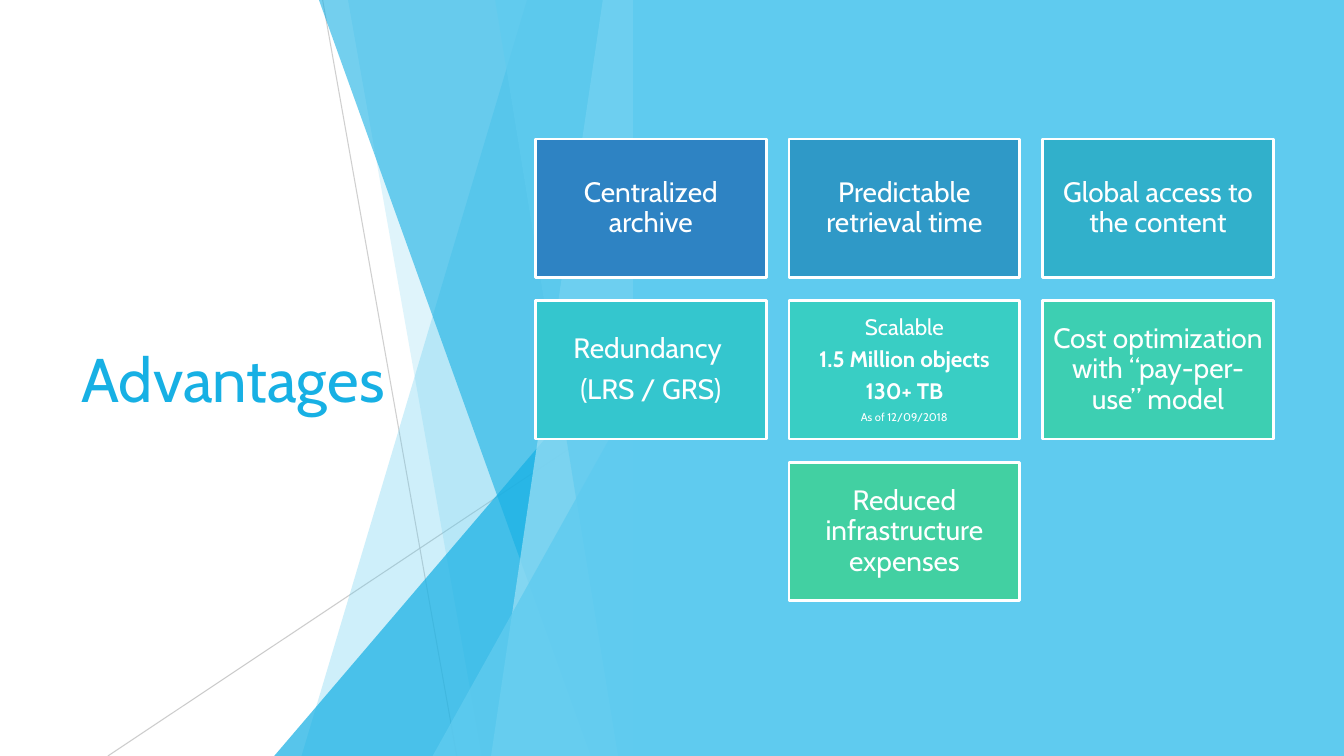
from dataclasses import dataclass

from lxml import etree
from pptx import Presentation
from pptx.dml.color import RGBColor
from pptx.enum.shapes import MSO_CONNECTOR, MSO_SHAPE
from pptx.enum.text import MSO_ANCHOR, PP_ALIGN
from pptx.oxml.ns import qn
from pptx.util import Inches, Pt

RECTANGLE = MSO_SHAPE.RECTANGLE
TRIANGLE = MSO_SHAPE.ISOSCELES_TRIANGLE
STRAIGHT = MSO_CONNECTOR.STRAIGHT
MIDDLE = MSO_ANCHOR.MIDDLE
CENTER = PP_ALIGN.CENTER
LEFT = PP_ALIGN.LEFT


@dataclass(frozen=True)
class Theme:
    font: str = "Cabin"
    sky: str = "5FCBEF"
    accent: str = "17B0E4"
    pale: str = "9FE0F5"
    gray: str = "BFBFBF"
    white: str = "FFFFFF"
    title_size: int = 44
    card_size: int = 20
    detail_size: int = 16
    note_size: int = 8
    space_ratio: float = 0.35


THEME = Theme()
SLIDE_WIDTH = 13.33
SLIDE_HEIGHT = 7.5
PANEL_LEFT = 6.28
FACET_TOP = -0.01
CARD_LEFT, CARD_TOP = 5.31, 1.38
CARD_WIDTH, CARD_HEIGHT = 2.29, 1.37
COLUMN_STEP, ROW_STEP = 2.515, 1.605


def card_lines(*texts):
    return [(text, THEME.card_size, False) for text in texts]


CARDS = [
    (0, 0, "2E83C3", card_lines("Centralized archive")),
    (1, 0, "2F99C7", card_lines("Predictable retrieval time")),
    (2, 0, "31B0CB", card_lines("Global access to the content")),
    (0, 1, "34C6CE", card_lines("Redundancy ", "(LRS / GRS)")),
    (1, 1, "39CEC4", [
        ("Scalable", THEME.detail_size, False),
        ("1.5 Million objects", THEME.detail_size, True),
        ("130+ TB", THEME.detail_size, True),
        ("As of 12/09/2018", THEME.note_size, False),
    ]),
    (2, 1, "3DCFB2", card_lines("Cost optimization with “pay-per-use” model")),
    (1, 2, "42D0A2", card_lines("Reduced infrastructure expenses")),
]


def set_opacity(shape, percent):
    for color in shape.element.iter(qn("a:srgbClr")):
        etree.SubElement(color, qn("a:alpha")).set("val", str(percent * 1000))


def fill_shape(shape, color, opacity=100):
    shape.shadow.inherit = False
    shape.fill.solid()
    shape.fill.fore_color.rgb = RGBColor.from_string(color)
    shape.line.fill.background()
    if opacity < 100:
        set_opacity(shape, opacity)


def add_run(paragraph, text, size, color, bold=False):
    run = paragraph.add_run()
    run.text = text
    run.font.name = THEME.font
    run.font.size = Pt(size)
    run.font.bold = bold
    run.font.color.rgb = RGBColor.from_string(color)


def add_ray(slide, start, end, opacity):
    points = [Inches(value) for value in (*start, *end)]
    connector = slide.shapes.add_connector(STRAIGHT, *points)
    connector.line.color.rgb = RGBColor.from_string(THEME.gray)
    connector.line.width = Pt(0.75)
    set_opacity(connector, opacity)
    etree.SubElement(connector.element.spPr, qn("a:effectLst"))


def add_facet(slide, top_x, bottom_x, color, opacity):
    top, bottom = Inches(FACET_TOP), Inches(SLIDE_HEIGHT)
    right = Inches(PANEL_LEFT)
    builder = slide.shapes.build_freeform(Inches(top_x), top)
    builder.add_line_segments(
        [(right, top), (right, bottom), (Inches(bottom_x), bottom)], close=True
    )
    fill_shape(builder.convert_to_shape(), color, opacity)


def add_wedge(slide, left, top, color, opacity):
    shape = slide.shapes.add_shape(
        TRIANGLE, Inches(left), Inches(top),
        Inches(PANEL_LEFT - left), Inches(SLIDE_HEIGHT - top),
    )
    shape.adjustments[0] = 1
    fill_shape(shape, color, opacity)


def add_facets(slide):
    add_ray(slide, (3.2, 0), (4.53, 7.5), 75)
    add_ray(slide, (6.28, 4.03), (1.07, 7.5), 80)
    add_facet(slide, 5.23, 2.99, THEME.sky, 30)
    add_facet(slide, 3.45, 4.78, THEME.sky, 20)
    add_wedge(slide, 2.72, 3.33, THEME.accent, 72)
    add_facet(slide, 3.16, 5.86, THEME.accent, 60)
    add_facet(slide, 5.98, 4.87, THEME.pale, 70)
    add_facet(slide, 4.91, 6.13, THEME.sky, 65)
    add_wedge(slide, 4.29, 3.93, THEME.sky, 80)


def add_panel(slide):
    panel = slide.shapes.add_shape(
        RECTANGLE, Inches(PANEL_LEFT), 0,
        Inches(SLIDE_WIDTH - PANEL_LEFT), Inches(SLIDE_HEIGHT),
    )
    fill_shape(panel, THEME.sky)
    return panel


def format_title(slide, panel):
    title = slide.shapes.title
    title.left, title.top = Inches(0.71), Inches(1.51)
    title.width, title.height = Inches(3.88), Inches(4.48)
    title.text_frame.vertical_anchor = MIDDLE
    paragraph = title.text_frame.paragraphs[0]
    paragraph.alignment = LEFT
    add_run(paragraph, "Advantages", THEME.title_size, THEME.accent)
    panel.element.addprevious(title.element)


def add_card(slide, column, row, color, lines):
    card = slide.shapes.add_shape(
        RECTANGLE,
        Inches(CARD_LEFT + column * COLUMN_STEP),
        Inches(CARD_TOP + row * ROW_STEP),
        Inches(CARD_WIDTH), Inches(CARD_HEIGHT),
    )
    fill_shape(card, color)
    card.line.color.rgb = RGBColor.from_string(THEME.white)
    card.line.width = Pt(2)
    frame = card.text_frame
    frame.word_wrap = True
    frame.vertical_anchor = MIDDLE
    frame.margin_left = frame.margin_right = Inches(0.08)
    frame.margin_top = frame.margin_bottom = Inches(0.08)
    for index, (text, size, bold) in enumerate(lines):
        paragraph = frame.add_paragraph() if index else frame.paragraphs[0]
        paragraph.alignment = CENTER
        paragraph.line_spacing = 0.9
        paragraph.space_after = Pt(size * THEME.space_ratio)
        add_run(paragraph, text, size, THEME.white, bold)


def main():
    presentation = Presentation()
    presentation.slide_width = Inches(SLIDE_WIDTH)
    presentation.slide_height = Inches(SLIDE_HEIGHT)
    slide = presentation.slides.add_slide(presentation.slide_layouts[5])
    add_facets(slide)
    panel = add_panel(slide)
    format_title(slide, panel)
    for card in CARDS:
        add_card(slide, *card)
    presentation.save("out.pptx")


if __name__ == "__main__":
    main()
